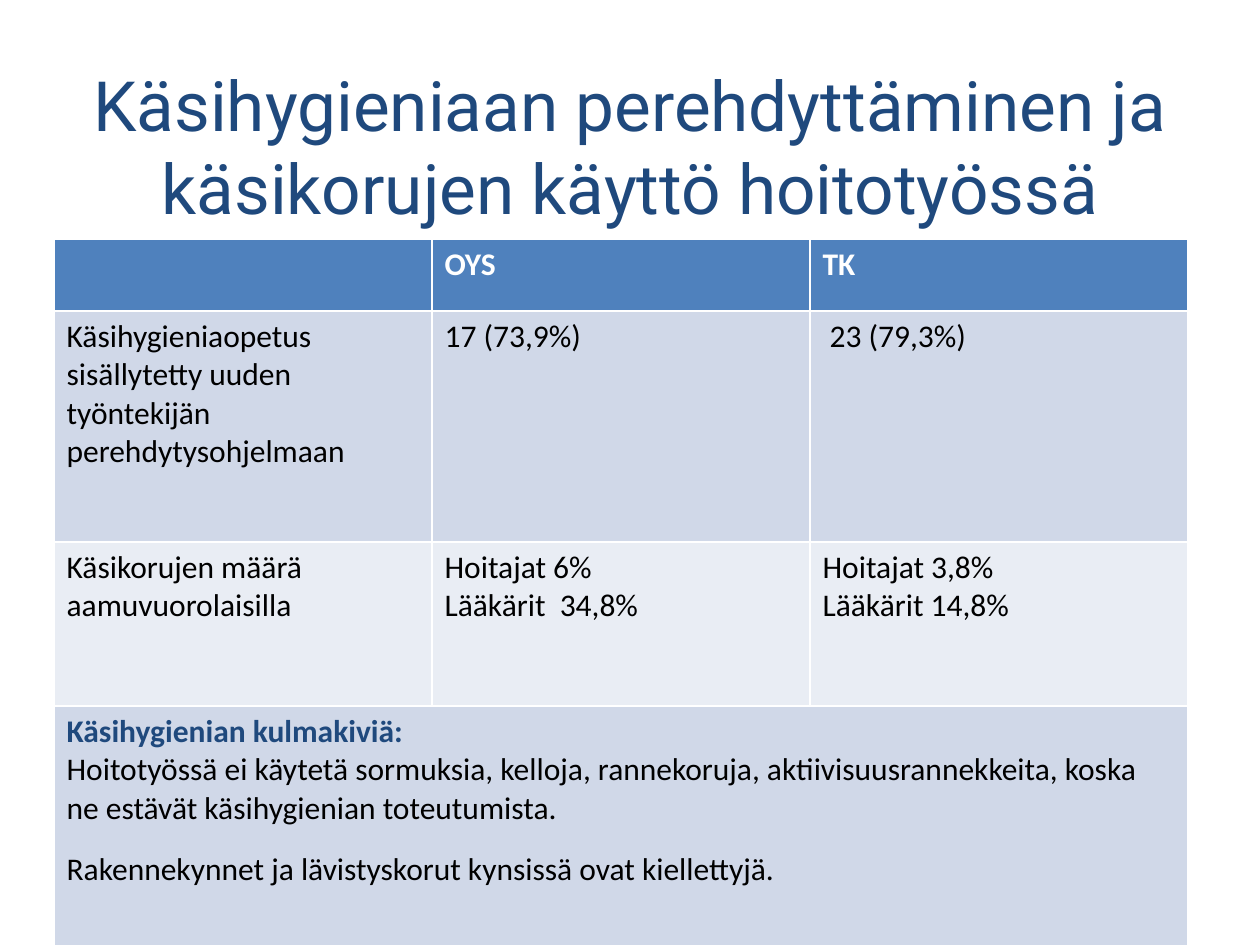
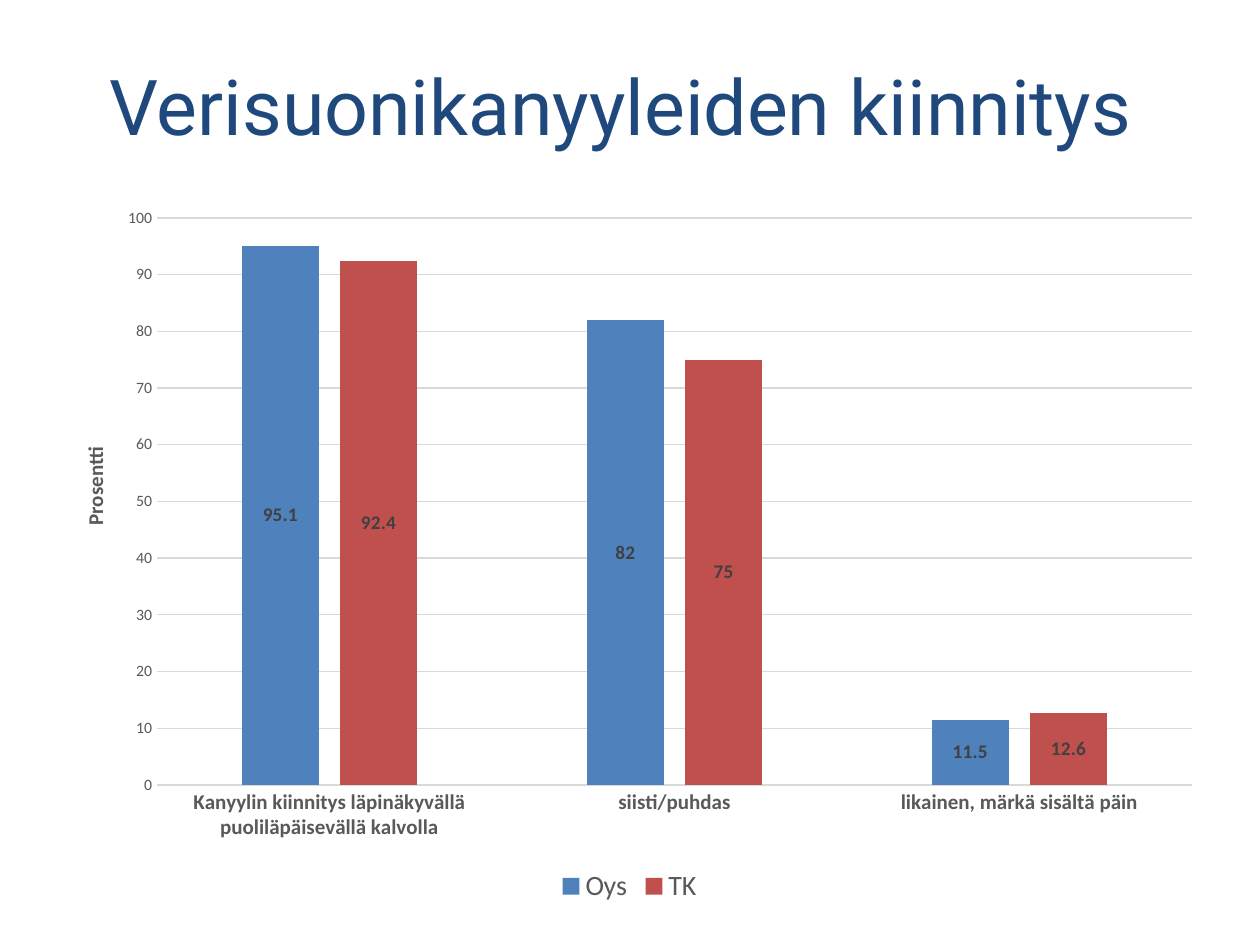
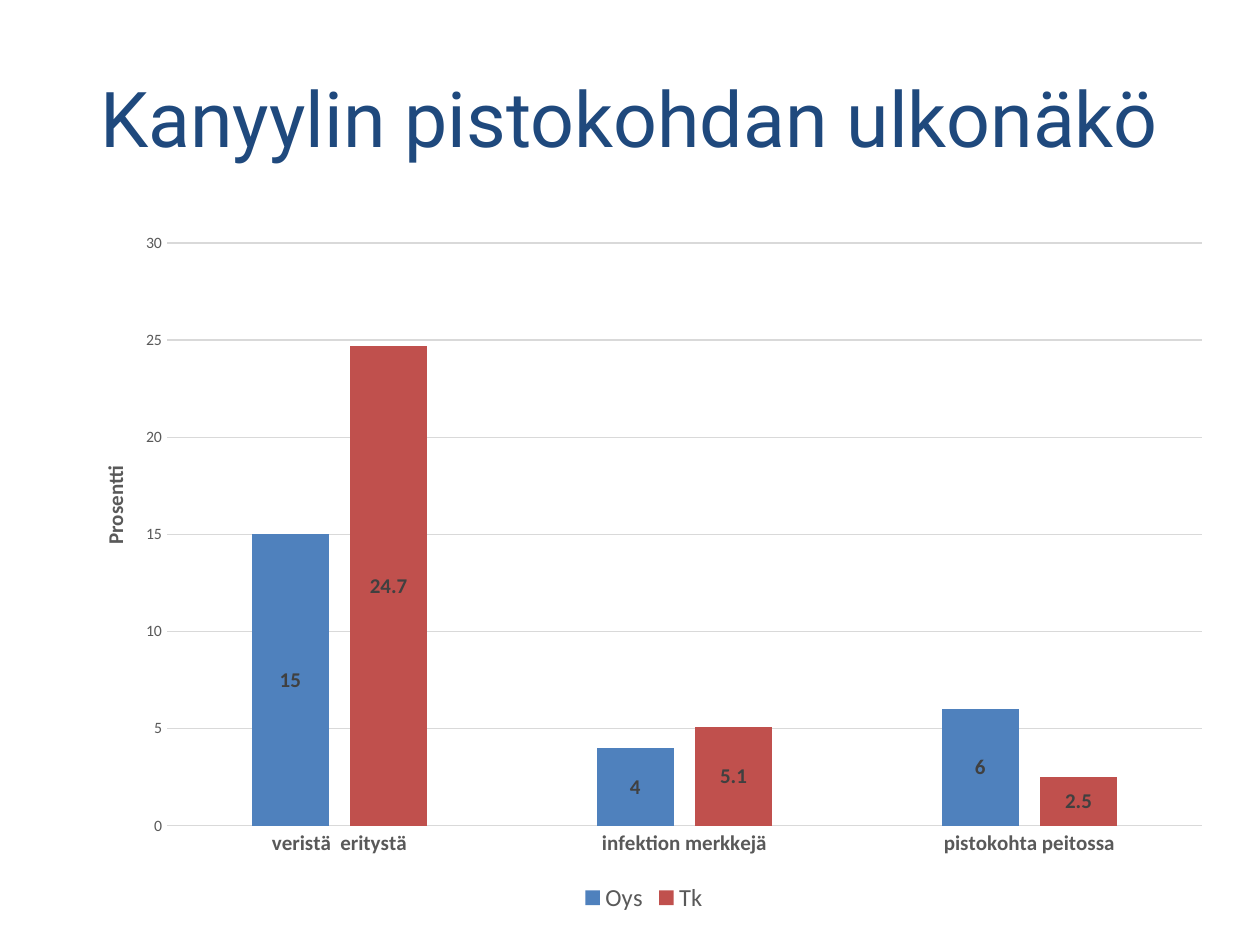
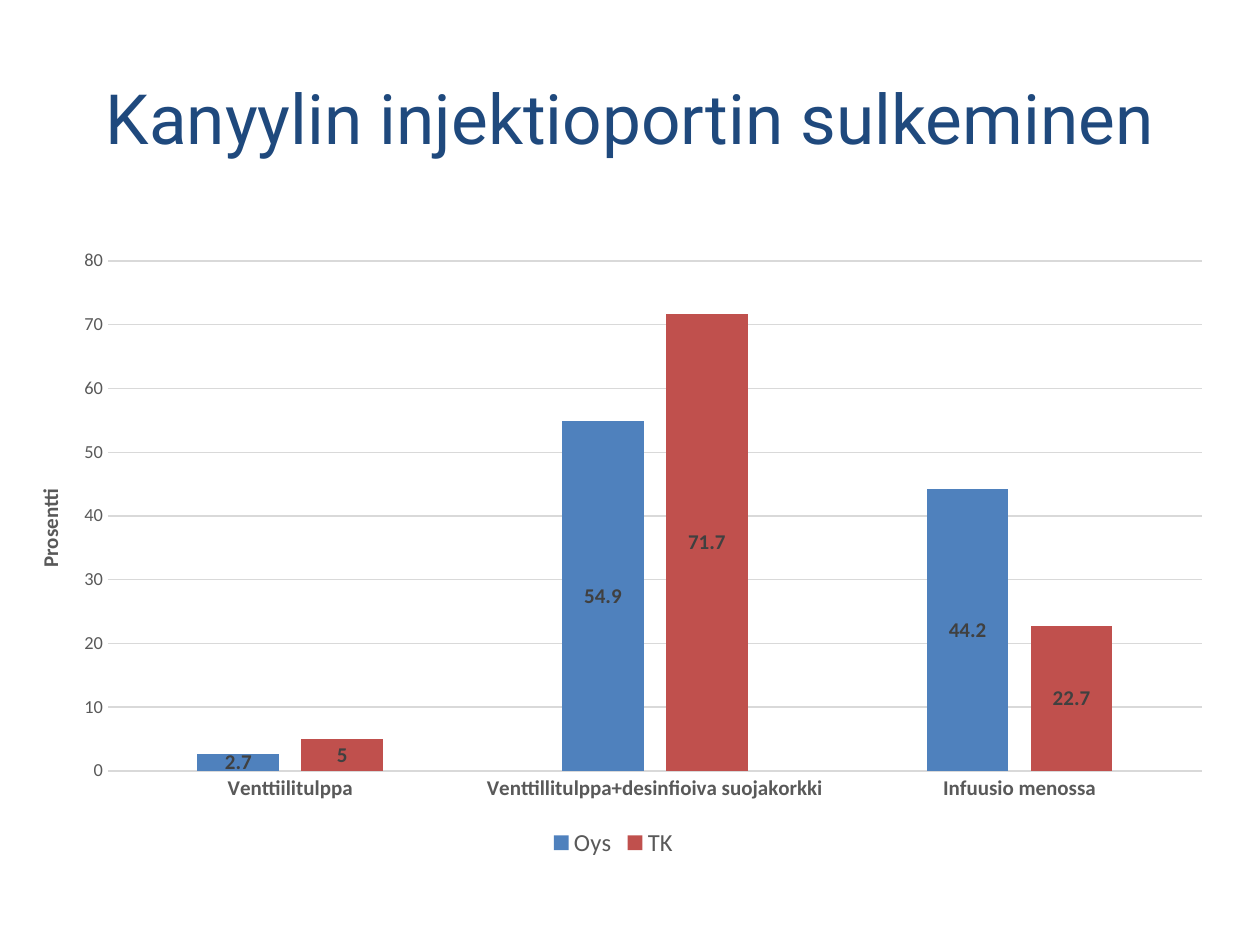
from lxml import etree
from pptx import Presentation
from pptx.chart.data import CategoryChartData
from pptx.dml.color import RGBColor
from pptx.enum.chart import XL_CHART_TYPE, XL_LABEL_POSITION, XL_LEGEND_POSITION, XL_TICK_MARK
from pptx.enum.text import MSO_ANCHOR, MSO_AUTO_SIZE, PP_ALIGN
from pptx.oxml.ns import qn
from pptx.util import Emu, Pt

PX_PER_INCH = 126
NAVY, BLUE, RED = "1F497D", "4F81BD", "C0504D"
WHITE, BLACK = "FFFFFF", "000000"
DARK_BAND, LIGHT_BAND = "D0D8E8", "E9EDF4"
AXIS_GREY, LABEL_GREY, GRID_GREY = "595959", "404040", "D9D9D9"
TITLE_FONT, BODY_FONT = "Roboto", "Calibri"


def px(length):
    return Emu(round(length * 914400 / PX_PER_INCH))


def color(hex_string):
    return RGBColor.from_string(hex_string)


def style_font(font, size, hex_color, bold=False, name=BODY_FONT):
    font.name = name
    font.size = Pt(size)
    font.bold = bold
    font.color.rgb = color(hex_color)


def add_titled_slide(presentation, text, left, top, size):
    slide = presentation.slides.add_slide(presentation.slide_layouts[5])
    title = slide.shapes.title
    title.left, title.top, title.width, title.height = px(left), px(top), px(1134), px(158)
    frame = title.text_frame
    frame.text = text
    frame.word_wrap = True
    frame.auto_size = MSO_AUTO_SIZE.NONE
    frame.vertical_anchor = MSO_ANCHOR.MIDDLE
    paragraph = frame.paragraphs[0]
    paragraph.alignment = PP_ALIGN.CENTER
    style_font(paragraph.font, size, NAVY, name=TITLE_FONT)
    return slide


def fill_cell(cell, text, fill, text_color=BLACK, bold=False):
    cell.fill.solid()
    cell.fill.fore_color.rgb = color(fill)
    cell.text = text
    for paragraph in cell.text_frame.paragraphs:
        style_font(paragraph.font, 18, text_color, bold)


def add_hygiene_table(slide, rows, cornerstones):
    """Header and data rows, then one merged row with the cornerstones."""
    row_heights = [72, 231, 164, 244]
    table = slide.shapes.add_table(
        len(row_heights), 3, px(54), px(239), px(1134), px(sum(row_heights))).table
    for row, height in zip(table.rows, row_heights):
        row.height = px(height)
    for column in table.columns:
        column.width = px(378)

    for row_index, texts in enumerate(rows):
        for column_index, text in enumerate(texts):
            cell = table.cell(row_index, column_index)
            if row_index == 0:
                fill_cell(cell, text, BLUE, WHITE, True)
            else:
                fill_cell(cell, text, DARK_BAND if row_index % 2 else LIGHT_BAND)

    last_row = len(rows)
    merged = table.cell(last_row, 0)
    merged.merge(table.cell(last_row, 2))
    fill_cell(merged, "\n".join(cornerstones), DARK_BAND)
    paragraphs = merged.text_frame.paragraphs
    style_font(paragraphs[0].font, 18, NAVY, True)
    paragraphs[-1].space_before = Pt(12.8)


def set_layout(parent, index, **values):
    """Place a chart part by hand; values are the children of c:manualLayout."""
    for old in parent.findall(qn("c:layout")):
        parent.remove(old)
    layout = etree.Element(qn("c:layout"))
    manual = etree.SubElement(layout, qn("c:manualLayout"))
    for tag, value in values.items():
        etree.SubElement(manual, qn(f"c:{tag}")).set("val", str(value))
    parent.insert(index, layout)


def style_category_axis(axis):
    axis.major_tick_mark = axis.minor_tick_mark = XL_TICK_MARK.NONE
    axis.has_major_gridlines = False
    axis.format.line.color.rgb = color(GRID_GREY)
    axis.format.line.width = Pt(0.75)
    style_font(axis.tick_labels.font, 12, AXIS_GREY, True)


def style_value_axis(axis, maximum, step, size):
    axis.minimum_scale, axis.maximum_scale, axis.major_unit = 0, maximum, step
    axis.major_tick_mark = axis.minor_tick_mark = XL_TICK_MARK.NONE
    axis.format.line.fill.background()
    grid_line = axis.major_gridlines.format.line
    grid_line.color.rgb = color(GRID_GREY)
    grid_line.width = Pt(0.75)
    style_font(axis.tick_labels.font, size, AXIS_GREY)
    axis.has_title = True
    frame = axis.axis_title.text_frame
    frame.text = "Prosentti"
    style_font(frame.paragraphs[0].font, 12, AXIS_GREY, True)


def add_percent_chart(slide, box, plot_box, axis_title_at, categories, series, scale,
                      axis_size=9, label_size=12, legend_size=14):
    """box and plot_box are left, top, width, height; scale is maximum and step."""
    data = CategoryChartData()
    data.categories = categories
    for name, values in series.items():
        data.add_series(name, values)
    chart = slide.shapes.add_chart(
        XL_CHART_TYPE.COLUMN_CLUSTERED, *map(px, box), data).chart
    chart.has_title = False
    style_font(chart.font, 10, BLACK)

    chart.has_legend = True
    chart.legend.position = XL_LEGEND_POSITION.BOTTOM
    chart.legend.include_in_layout = False
    style_font(chart.legend.font, legend_size, AXIS_GREY)
    style_category_axis(chart.category_axis)
    style_value_axis(chart.value_axis, *scale, axis_size)

    plot = chart.plots[0]
    plot.vary_by_categories = False
    plot.gap_width, plot.overlap = 219, -27
    for column_series, hex_color in zip(plot.series, (BLUE, RED)):
        column_series.format.fill.solid()
        column_series.format.fill.fore_color.rgb = color(hex_color)
        labels = column_series.data_labels
        labels.show_value = True
        labels.position = XL_LABEL_POSITION.CENTER
        style_font(labels.font, label_size, LABEL_GREY, True)

    left, top, width, height = box
    plot_left, plot_top, plot_width, plot_height = plot_box
    plot_area = chart._chartSpace.chart.plotArea
    set_layout(plot_area, 0, layoutTarget="inner", xMode="edge", yMode="edge",
               x=(plot_left - left) / width, y=(plot_top - top) / height,
               w=plot_width / width, h=plot_height / height)
    title_left, title_top = axis_title_at
    set_layout(chart.value_axis.axis_title._element, 1, xMode="edge", yMode="edge",
               x=(title_left - left) / width, y=(title_top - top) / height)


def main():
    presentation = Presentation()
    presentation.slide_width, presentation.slide_height = px(1260), px(945)

    slide = add_titled_slide(
        presentation, "Käsihygieniaan perehdyttäminen ja käsikorujen käyttö hoitotyössä",
        63, 66, 39.6)
    add_hygiene_table(slide, [
        ["", "OYS", "TK"],
        ["Käsihygieniaopetus sisällytetty uuden työntekijän perehdytysohjelmaan",
         "17 (73,9%)", " 23 (79,3%)"],
        ["Käsikorujen määrä aamuvuorolaisilla",
         "Hoitajat 6%\nLääkärit  34,8%", "Hoitajat 3,8%\nLääkärit 14,8%"],
    ], [
        "Käsihygienian kulmakiviä:",
        "Hoitotyössä ei käytetä sormuksia, kelloja, rannekoruja, "
        "aktiivisuusrannekkeita, koska ne estävät käsihygienian toteutumista.",
        "Rakennekynnet ja lävistyskorut kynsissä ovat kiellettyjä.",
    ])

    slide = add_titled_slide(presentation, "Verisuonikanyyleiden kiinnitys", 54, 26, 44)
    add_percent_chart(
        slide, (44, 195, 1171, 714), (157, 218, 1035, 567), (77, 443),
        ["Kanyylin kiinnitys läpinäkyvällä puoliläpäisevällä kalvolla",
         "siisti/puhdas", "likainen, märkä sisältä päin"],
        {"Oys": [95.1, 82, 11.5], "TK": [92.4, 75, 12.6]},
        (100, 10), label_size=11, legend_size=16)

    slide = add_titled_slide(presentation, "Kanyylin pistokohdan ulkonäkö", 63, 38, 44)
    add_percent_chart(
        slide, (63, 220, 1162, 698), (167, 243, 1035, 583), (97, 462),
        ["veristä  eritystä", "infektion merkkejä", "pistokohta peitossa"],
        {"Oys": [15, 4, 6], "Tk": [24.7, 5.1, 2.5]}, (30, 5))

    slide = add_titled_slide(presentation, "Kanyylin injektioportin sulkeminen", 63, 38, 39.6)
    add_percent_chart(
        slide, (0, 175, 1227, 688), (108, 261, 1094, 510), (32, 485),
        ["Venttiilitulppa", "Venttillitulppa+desinfioiva suojakorkki", "Infuusio menossa"],
        {"Oys": [2.7, 54.9, 44.2], "TK": [5, 71.7, 22.7]}, (80, 10), axis_size=10.5)

    presentation.save("out.pptx")


if __name__ == "__main__":
    main()
